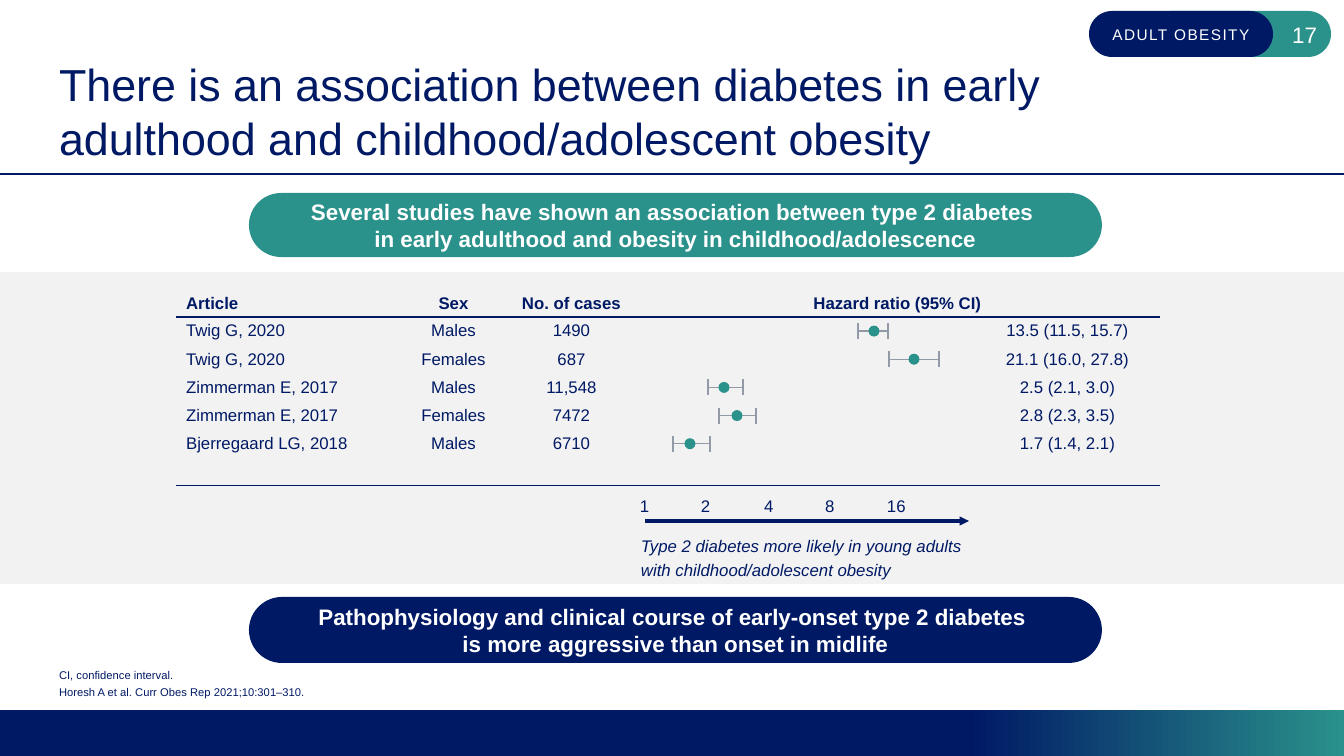
"""Build the slide on type 2 diabetes and childhood obesity with its forest plot."""
from dataclasses import dataclass
from typing import NamedTuple

import lxml.etree
import pptx
import pptx.dml.color
import pptx.enum.shapes
import pptx.enum.text
import pptx.oxml
import pptx.oxml.ns
import pptx.util

Align = pptx.enum.text.PP_ALIGN
Anchor = pptx.enum.text.MSO_ANCHOR
Preset = pptx.enum.shapes.MSO_SHAPE
qn = pptx.oxml.ns.qn

NAVY = pptx.dml.color.RGBColor(0x00, 0x19, 0x65)
TEAL = pptx.dml.color.RGBColor(0x2A, 0x91, 0x8B)
GREY = pptx.dml.color.RGBColor(0x93, 0x9A, 0xA7)
PALE = pptx.dml.color.RGBColor(0xF2, 0xF2, 0xF2)
WHITE = pptx.dml.color.RGBColor(0xFF, 0xFF, 0xFF)

SLIDE_WIDTH, SLIDE_HEIGHT = 1344, 756
EMU_PER_PX = 12192000 / SLIDE_WIDTH
FONT = "Arial"
NO_STYLE = "{2D5ABB26-0587-4C30-8999-92F81FD0307C}"

COLUMN_WIDTHS = (193, 223, 109, 127, 340, 185)
TABLE_LEFT, TABLE_TOP, TABLE_HEIGHT, HEADER_HEIGHT = -17, 269, 217, 48
CAP_HALF, DOT_SIZE = 8, 11
DIGIT_WIDTH = 9
HEADERS = ("", "Article", "Sex", "No. of cases", "Hazard ratio (95% CI)", "")


class Box(NamedTuple):
    left: int
    top: int
    width: int
    height: int


@dataclass(frozen=True)
class TextStyle:
    size: int
    color: pptx.dml.color.RGBColor = NAVY
    bold: bool = False
    italic: bool = False
    align: Align = Align.LEFT
    spacing: float = 1.0
    after: int = 0


class Study(NamedTuple):
    article: str
    sex: str
    cases: str
    ratio: str
    lower: int
    estimate: int
    upper: int


class Pill(NamedTuple):
    box: Box
    color: pptx.dml.color.RGBColor
    lines: tuple[str, ...]


class Tick(NamedTuple):
    label: str
    left: int


STUDIES = (
    Study("Twig G, 2020", "Males", "1490", "13.5 (11.5, 15.7)", 858, 874, 888),
    Study("Twig G, 2020", "Females", "687", "21.1 (16.0, 27.8)", 889, 914, 939),
    Study("Zimmerman E, 2017", "Males", "11,548", "2.5 (2.1, 3.0)", 708, 724, 743),
    Study("Zimmerman E, 2017", "Females", "7472", "2.8 (2.3, 3.5)", 719, 737, 756),
    Study("Bjerregaard LG, 2018", "Males", "6710", "1.7 (1.4, 2.1)", 673, 690, 710),
)
ROW_HEIGHT = (TABLE_HEIGHT - HEADER_HEIGHT) / (len(STUDIES) + 1)
PILLS = (
    Pill(Box(249, 193, 853, 64), TEAL,
         ("Several studies have shown an association between type 2 diabetes ",
          "in early adulthood and obesity in childhood/adolescence")),
    Pill(Box(249, 597, 853, 66), NAVY,
         ("Pathophysiology and clinical course of early-onset type 2 diabetes ",
          "is more aggressive than onset in midlife")),
)
TICKS = (Tick("1", 640), Tick("2", 701), Tick("4", 764), Tick("8", 825), Tick("16", 887))


def px(length: float) -> pptx.util.Emu:
    return pptx.util.Emu(round(length * EMU_PER_PX))


def place(shape, box: Box) -> None:
    shape.left, shape.top, shape.width, shape.height = map(px, box)


def style_paragraph(para, style: TextStyle) -> None:
    para.alignment = style.align
    para.line_spacing = style.spacing
    para.space_before = pptx.util.Pt(0)
    para.space_after = pptx.util.Pt(style.after)
    para.font.name = FONT
    para.font.size = pptx.util.Pt(style.size)
    para.font.bold = style.bold
    para.font.italic = style.italic
    para.font.color.rgb = style.color


def write_lines(para, lines: tuple[str, ...], style: TextStyle) -> None:
    for index, line in enumerate(lines):
        if index:
            para.add_line_break()
        para.add_run().text = line
    style_paragraph(para, style)


def set_frame(frame, anchor: Anchor, across: int = 0, down: int = 0, wrap: bool = True) -> None:
    frame.word_wrap = wrap
    frame.auto_size = pptx.enum.text.MSO_AUTO_SIZE.NONE
    frame.vertical_anchor = anchor
    frame.margin_left = frame.margin_right = px(across)
    frame.margin_top = frame.margin_bottom = px(down)


def add_text(page, box: Box, lines: tuple[str, ...], style: TextStyle,
             anchor: Anchor = Anchor.TOP, wrap: bool = True) -> None:
    frame = page.shapes.add_textbox(*map(px, box)).text_frame
    set_frame(frame, anchor, wrap=wrap)
    write_lines(frame.paragraphs[0], lines, style)


def add_block(page, preset: Preset, box: Box, color: pptx.dml.color.RGBColor):
    block = page.shapes.add_shape(preset, *map(px, box))
    block.shadow.inherit = False
    block.fill.solid()
    block.fill.fore_color.rgb = color
    block.line.fill.background()
    return block


def add_pill(page, pill: Pill, size: int):
    shape = add_block(page, Preset.ROUNDED_RECTANGLE, pill.box, pill.color)
    shape.adjustments[0] = 0.5
    set_frame(shape.text_frame, Anchor.MIDDLE, 8, 4)
    style = TextStyle(size, WHITE, bold=len(pill.lines) > 1, align=Align.CENTER)
    write_lines(shape.text_frame.paragraphs[0], pill.lines, style)
    return shape


def add_line(page, start: tuple[float, float], end: tuple[float, float],
             color: pptx.dml.color.RGBColor, weight: float):
    line = page.shapes.add_connector(
        pptx.enum.shapes.MSO_CONNECTOR.STRAIGHT, *map(px, start + end))
    line.line.color.rgb = color
    line.line.width = pptx.util.Pt(weight)
    lxml.etree.SubElement(line._element.spPr, qn("a:effectLst"))
    return line


def add_bottom_border(cell) -> None:
    border = pptx.oxml.parse_xml(
        '<a:lnB xmlns:a="http://schemas.openxmlformats.org/drawingml/2006/main" w="12700">'
        f'<a:solidFill><a:srgbClr val="{NAVY}"/></a:solidFill></a:lnB>')
    cell._tc.get_or_add_tcPr().insert(0, border)


def add_study_table(page) -> None:
    rows = [HEADERS, *(("", s.article, s.sex, s.cases, "", s.ratio) for s in STUDIES), ("",) * 6]
    last = len(rows) - 1
    box = Box(TABLE_LEFT, TABLE_TOP, sum(COLUMN_WIDTHS), TABLE_HEIGHT)
    table = page.shapes.add_table(len(rows), len(COLUMN_WIDTHS), *map(px, box)).table
    table.first_row = table.horz_banding = False
    table._tbl.tblPr.find(qn("a:tableStyleId")).text = NO_STYLE
    for column, width in zip(table.columns, COLUMN_WIDTHS):
        column.width = px(width)
    for row_index, values in enumerate(rows):
        table.rows[row_index].height = px(ROW_HEIGHT if row_index else HEADER_HEIGHT)
        for column_index, value in enumerate(values):
            cell = table.cell(row_index, column_index)
            cell.fill.background()
            cell.margin_top = cell.margin_bottom = px(4)
            cell.vertical_anchor = Anchor.MIDDLE if row_index else Anchor.BOTTOM
            para = cell.text_frame.paragraphs[0]
            align = Align.CENTER if column_index > 1 else Align.LEFT
            style = TextStyle(12, bold=row_index == 0, align=align)
            write_lines(para, (value,) if value else (), style)
            if not value:
                lxml.etree.SubElement(para._p, qn("a:endParaRPr")).set("sz", "1200")
            if row_index in (0, last) and column_index:
                add_bottom_border(cell)
    table.cell(0, 4).merge(table.cell(0, 5))


def add_interval(page, study: Study, middle: float) -> None:
    for end in (study.lower, study.upper):
        add_line(page, (end, middle - CAP_HALF), (end, middle + CAP_HALF), GREY, 1)
    add_line(page, (study.lower, middle), (study.upper, middle), GREY, 1)
    corner = (study.estimate - DOT_SIZE / 2, middle - DOT_SIZE / 2)
    add_block(page, Preset.OVAL, Box(*corner, DOT_SIZE, DOT_SIZE), TEAL)


def add_axis(page) -> None:
    for tick in TICKS:
        box = Box(tick.left, 492, DIGIT_WIDTH * len(tick.label), 22)
        add_text(page, box, (tick.label,), TextStyle(12, spacing=1.2), wrap=False)
    arrow = add_line(page, (645, 521), (969, 521), NAVY, 2.25)
    lxml.etree.SubElement(arrow.line._get_or_add_ln(), qn("a:tailEnd")).set("type", "triangle")
    add_text(page, Box(641, 532, 456, 46),
             ("Type 2 diabetes more likely in young adults ", "with childhood/adolescent obesity"),
             TextStyle(12, italic=True, spacing=1.2))


def fill_placeholders(page) -> None:
    title, notes = page.shapes.title, page.placeholders[1]
    place(title, Box(59, 45, 1202, 119))
    set_frame(title.text_frame, Anchor.BOTTOM)
    write_lines(title.text_frame.paragraphs[0],
                ("There is an association between diabetes in early",
                 "adulthood and childhood/adolescent obesity"), TextStyle(32))
    place(notes, Box(59, 664, 1202, 35))
    set_frame(notes.text_frame, Anchor.BOTTOM)
    notes.text_frame.text = """CI, confidence interval.
Horesh A et al. Curr Obes Rep 2021;10:301–310."""
    for para in notes.text_frame.paragraphs:
        properties = para._p.get_or_add_pPr()
        properties.set("marL", "0")
        properties.set("indent", "0")
        lxml.etree.SubElement(properties, qn("a:buNone"))
        style_paragraph(para, TextStyle(8, after=3))


def add_frame_parts(page) -> None:
    footer = add_block(page, Preset.RECTANGLE, Box(0, 710, SLIDE_WIDTH, 46), NAVY)
    footer.fill.gradient()
    footer.fill.gradient_angle = 0
    for stop, color, position in zip(footer.fill.gradient_stops, (NAVY, TEAL), (0.72, 1.0)):
        stop.color.rgb = color
        stop.position = position
    add_line(page, (0, 174), (SLIDE_WIDTH, 174), NAVY, 1.5)
    add_pill(page, Pill(Box(1147, 11, 184, 46), TEAL, ()), 11)
    section = add_pill(page, Pill(Box(1089, 11, 184, 46), NAVY, ("ADULT OBESITY",)), 11)
    section.text_frame.paragraphs[0].runs[0]._r.get_or_add_rPr().set("spc", "100")
    add_text(page, Box(1264, 15, 53, 40), ("17",),
             TextStyle(16, WHITE, align=Align.RIGHT), Anchor.MIDDLE)
    add_block(page, Preset.RECTANGLE, Box(0, 272, SLIDE_WIDTH, 312), PALE)


def main() -> None:
    deck = pptx.Presentation()
    deck.slide_width, deck.slide_height = px(SLIDE_WIDTH), px(SLIDE_HEIGHT)
    page = deck.slides.add_slide(deck.slide_layouts[1])
    fill_placeholders(page)
    add_frame_parts(page)
    add_study_table(page)
    for index, study in enumerate(STUDIES):
        add_interval(page, study, TABLE_TOP + HEADER_HEIGHT + (index + 0.5) * ROW_HEIGHT)
    add_axis(page)
    for pill in PILLS:
        add_pill(page, pill, 16)
    deck.save("out.pptx")


if __name__ == "__main__":
    main()
